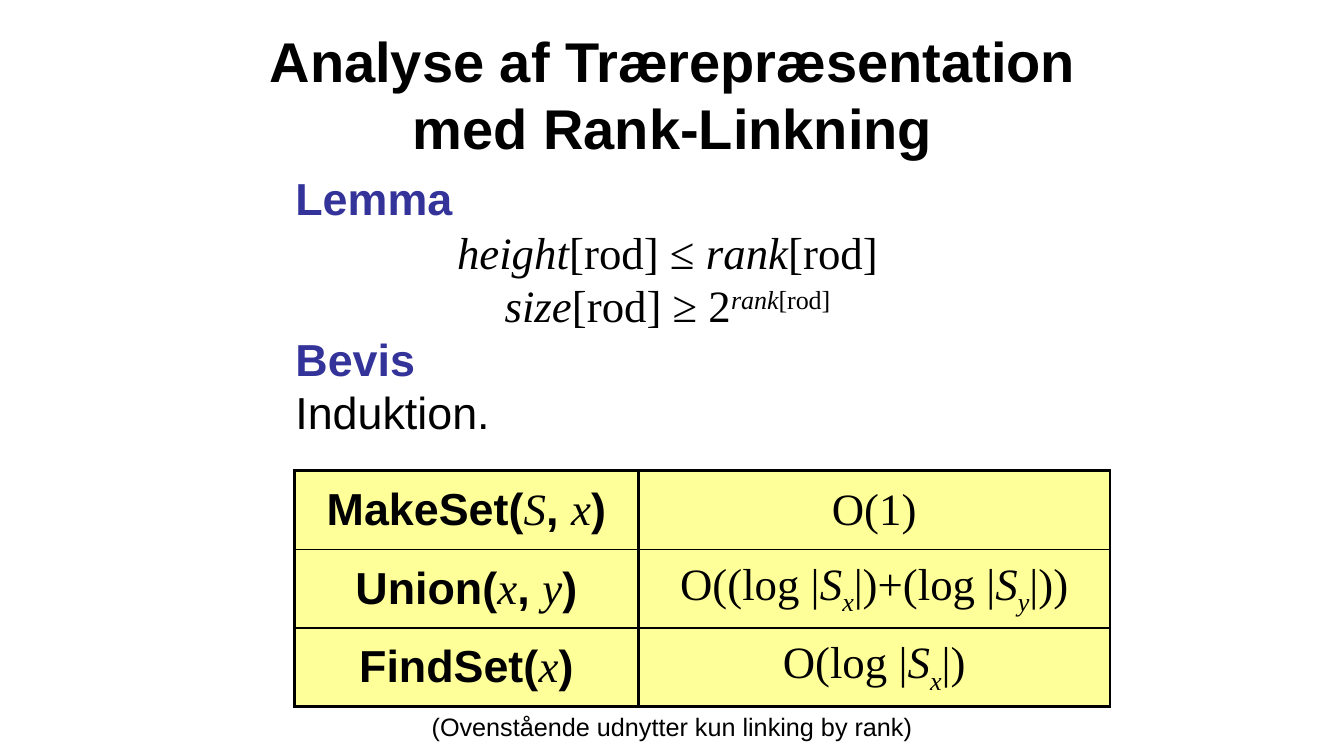
from lxml import etree
from pptx import Presentation
from pptx import util as u
from pptx.dml import color
from pptx.enum import text
from pptx.oxml import ns

COLORS = {"ink": "000000", "heading": "333399", "cell": "FFFF99"}
SANS, SERIF = "Arial", "Times New Roman"

TITLE = "Analyse af Trærepræsentation\vmed Rank-Linkning"
NOTE = "(Ovenstående udnytter kun linking by rank)"

# style: font, bold, italic, baseline shift in percent, color
STYLES = {
    "heading": (SANS, True, False, 0, "heading"),
    "bold": (SANS, True, False, 0, "ink"),
    "plain": (SANS, False, False, 0, "ink"),
    "math": (SERIF, False, False, 0, "ink"),
    "var": (SERIF, False, True, 0, "ink"),
    "sup": (SERIF, False, False, 30, "ink"),
    "supvar": (SERIF, False, True, 30, "ink"),
    "sub": (SERIF, False, True, -25, "ink"),
}

LEFT, CENTER = text.PP_ALIGN.LEFT, text.PP_ALIGN.CENTER
LEMMA = [
    (LEFT, [("Lemma", "heading")]),
    (CENTER, [("height", "var"), ("[rod] ≤ ", "math"), ("rank", "var"), ("[rod]", "math")]),
    (CENTER, [("size", "var"), ("[rod] ≥ 2", "math"), ("rank", "supvar"), ("[rod]", "sup")]),
    (LEFT, [("Bevis", "heading")]),
    (LEFT, [("Induktion.", "plain")]),
]

RUNTIMES = [
    ([("MakeSet(", "bold"), ("S", "var"), (", ", "bold"), ("x", "var"), (")", "bold")],
     [("O(1)", "math")]),
    ([("Union(", "bold"), ("x", "var"), (", ", "bold"), ("y", "var"), (")", "bold")],
     [("O((log |", "math"), ("S", "var"), ("x", "sub"), ("|)+(log |", "math"),
       ("S", "var"), ("y", "sub"), ("|))", "math")]),
    ([("FindSet(", "bold"), ("x", "var"), (")", "bold")],
     [("O(log |", "math"), ("S", "var"), ("x", "sub"), ("|)", "math")]),
]
COLUMN_WIDTHS = (3.41, 4.68)
ROW_HEIGHT = 0.78
THICK, THIN = 2.25, 1


def place(shape, left, top, width, height):
    shape.left, shape.top = u.Inches(left), u.Inches(top)
    shape.width, shape.height = u.Inches(width), u.Inches(height)


def style_run(run, style, size):
    font, bold, italic, shift, tint = STYLES[style]
    run.font.name, run.font.size = font, u.Pt(size)
    run.font.bold, run.font.italic = bold, italic
    run.font.color.rgb = color.RGBColor.from_string(COLORS[tint])
    if shift:
        run.font._element.set("baseline", str(shift * 1000))


def write(paragraph, pieces, align, size=32):
    paragraph.alignment = align
    for words, style in pieces:
        run = paragraph.add_run()
        run.text = words
        style_run(run, style, size)


def add_border(cell, side, width):
    line = etree.SubElement(cell._tc.get_or_add_tcPr(), ns.qn(f"a:ln{side}"), w=str(u.Pt(width)))
    fill = etree.SubElement(line, ns.qn("a:solidFill"))
    etree.SubElement(fill, ns.qn("a:srgbClr"), val=COLORS["ink"])


def add_title(slide):
    title = slide.shapes.title
    place(title, 0.67, 0.3, 12, 1.25)
    frame = title.text_frame
    frame.text = TITLE
    frame.auto_size = text.MSO_AUTO_SIZE.NONE
    frame.vertical_anchor = text.MSO_ANCHOR.MIDDLE
    frame.paragraphs[0].alignment = CENTER
    for run in frame.paragraphs[0].runs:
        style_run(run, "bold", 40)


def add_lemma(slide):
    lemma = slide.placeholders[1]
    place(lemma, 2.83, 1.75, 7.58, 2.67)
    frame = lemma.text_frame
    frame.auto_size = text.MSO_AUTO_SIZE.NONE
    frame.vertical_anchor = text.MSO_ANCHOR.TOP
    for index, (align, pieces) in enumerate(LEMMA):
        paragraph = frame.add_paragraph() if index else frame.paragraphs[0]
        write(paragraph, pieces, align)
        paragraph.line_spacing = 0.8
        paragraph.space_before = u.Pt(7.5)
        props = paragraph._p.get_or_add_pPr()
        props.set("marL", str(u.Inches(0.37)))
        props.set("indent", str(u.Inches(-0.37)))
        etree.SubElement(props, ns.qn("a:buNone"))


def add_runtimes(slide):
    rows, columns = len(RUNTIMES), len(COLUMN_WIDTHS)
    runtimes = slide.shapes.add_table(
        rows, columns, u.Inches(2.92), u.Inches(4.67),
        u.Inches(sum(COLUMN_WIDTHS)), u.Inches(rows * ROW_HEIGHT)).table
    runtimes.first_row = runtimes.horz_banding = False
    for column, width in zip(runtimes.columns, COLUMN_WIDTHS):
        column.width = u.Inches(width)
    for r, row in enumerate(RUNTIMES):
        runtimes.rows[r].height = u.Inches(ROW_HEIGHT)
        top = THIN if r else THICK
        bottom = THIN if r < rows - 1 else THICK
        for c, pieces in enumerate(row):
            cell = runtimes.cell(r, c)
            for side, width in (("L", THICK), ("R", THICK), ("T", top), ("B", bottom)):
                add_border(cell, side, width)
            cell.fill.solid()
            cell.fill.fore_color.rgb = color.RGBColor.from_string(COLORS["cell"])
            cell.vertical_anchor = text.MSO_ANCHOR.MIDDLE
            cell.margin_left = cell.margin_right = u.Inches(0.1)
            cell.margin_top = cell.margin_bottom = 0
            write(cell.text_frame.paragraphs[0], pieces, CENTER)


def add_note(slide):
    note = slide.shapes.add_textbox(u.Inches(3.5), u.Inches(7.01), u.Inches(6.33), u.Inches(0.4))
    note.text_frame.word_wrap = True
    write(note.text_frame.paragraphs[0], [(NOTE, "plain")], CENTER, 18)


def main():
    deck = Presentation()
    deck.slide_width, deck.slide_height = u.Inches(13.33), u.Inches(7.5)
    slide = deck.slides.add_slide(deck.slide_layouts[1])
    add_title(slide)
    add_lemma(slide)
    add_runtimes(slide)
    add_note(slide)
    deck.save("out.pptx")


if __name__ == "__main__":
    main()
